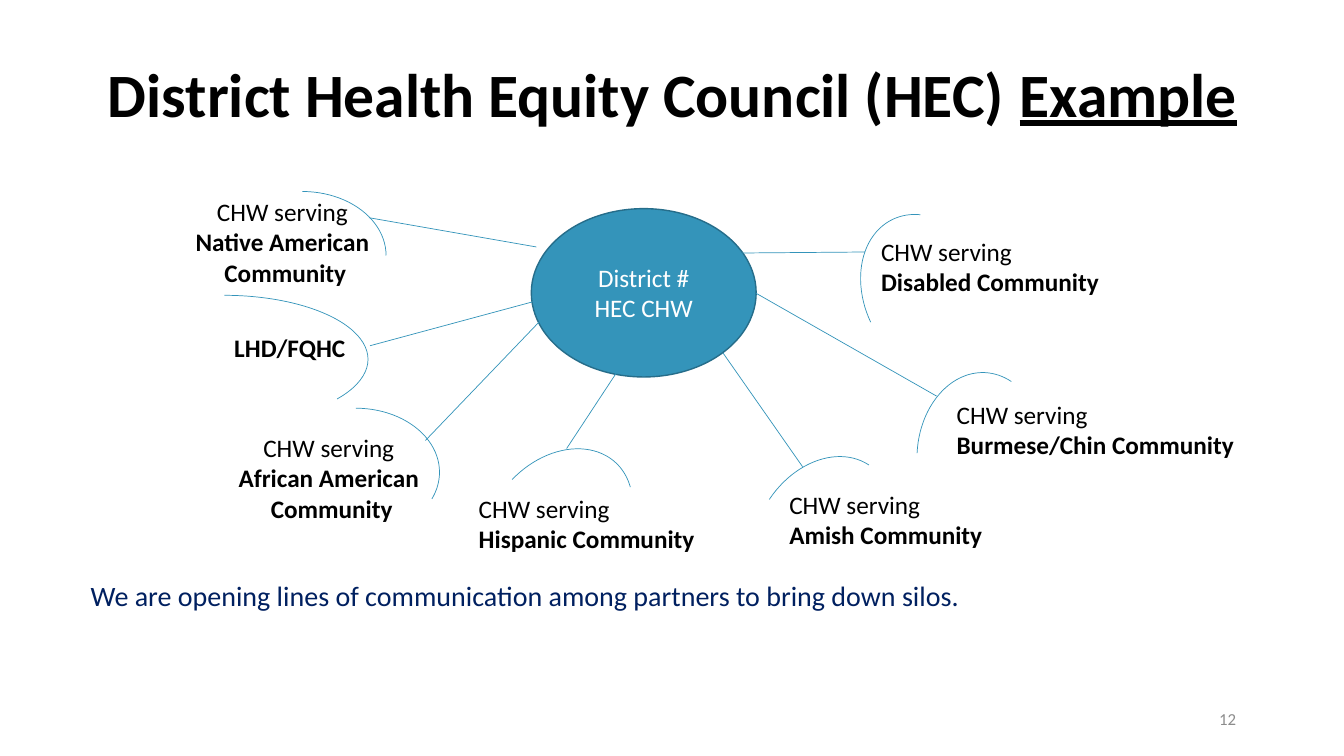
from lxml import etree
from pptx import Presentation
from pptx.dml.color import RGBColor
from pptx.enum.shapes import MSO_CONNECTOR, MSO_SHAPE
from pptx.enum.text import MSO_ANCHOR, MSO_AUTO_SIZE, PP_ALIGN
from pptx.oxml.ns import qn
from pptx.util import Inches, Pt

BLACK = RGBColor(0x00, 0x00, 0x00)
WHITE = RGBColor(0xFF, 0xFF, 0xFF)
TEAL = RGBColor(0x34, 0x94, 0xBA)
DARK_TEAL = RGBColor(0x26, 0x6D, 0x8A)
NAVY = RGBColor(0x00, 0x20, 0x60)
GRAY = RGBColor(0x8C, 0x8C, 0x8C)

LEFT, CENTER, RIGHT = PP_ALIGN.LEFT, PP_ALIGN.CENTER, PP_ALIGN.RIGHT
WIDE_SWEEP = (162, 11.616)
ARC_SIZE = (1.66, 1.27)

SPOKES = [
    ((5.38, 3.16), (4.22, 4.37)),
    ((6.12, 3.69), (5.62, 4.45)),
    ((7.17, 3.5), (7.96, 4.63)),
    ((7.5, 2.91), (9.29, 3.93)),
    ((5.32, 2.45), (3.66, 2.16)),
    ((7.36, 2.51), (8.58, 2.5)),
    ((5.3, 2.99), (3.67, 3.43)),
]

COMMUNITIES = [
    ((2.26, 4.24, 2.06, 1.01), CENTER, ["African American ", "Community"]),
    ((4.65, 4.84, 2.36, 0.71), LEFT, ["Hispanic Community"]),
    ((7.73, 4.8, 2.13, 0.71), LEFT, ["Amish Community"]),
    ((9.39, 3.91, 2.97, 0.71), LEFT, ["Burmese/Chin Community"]),
    ((1.83, 1.9, 2, 1.01), CENTER, ["Native American ", "Community"]),
    ((8.64, 2.29, 2.44, 0.71), LEFT, ["Disabled Community"]),
]

ARCS = [
    ((2.17, 1.9), 0, None),
    ((2.7, 4.05), 0, WIDE_SWEEP),
    ((4.71, 4.56), 313.6, WIDE_SWEEP),
    ((7.33, 4.67), 303.5, None),
    ((8.9, 3.89), 272.7, WIDE_SWEEP),
    ((8.38, 2.29), 244.8, WIDE_SWEEP),
]


class SlideBuilder:
    font_name = "Calibri"

    def __init__(self, page):
        self.page = page

    def add_lines(self, frame, lines, size=18, color=BLACK, align=LEFT, spacing=None):
        for index, spans in enumerate(lines):
            para = frame.paragraphs[0] if index == 0 else frame.add_paragraph()
            para.alignment = align
            if spacing:
                para.line_spacing = spacing
            for text, bold, underline in spans:
                span = para.add_run()
                span.text = text
                span.font.name = self.font_name
                span.font.size = Pt(size)
                span.font.color.rgb = color
                span.font.bold = bold
                span.font.underline = underline

    def text(self, place, lines, wrap=False, anchor=MSO_ANCHOR.TOP, **style):
        box = self.page.shapes.add_textbox(*map(Inches, place))
        frame = box.text_frame
        frame.word_wrap = wrap
        frame.auto_size = MSO_AUTO_SIZE.NONE if wrap else MSO_AUTO_SIZE.SHAPE_TO_FIT_TEXT
        frame.vertical_anchor = anchor
        self.add_lines(frame, lines, **style)

    def shape(self, kind, place, line, width, fill=None):
        shape = self.page.shapes.add_shape(kind, *map(Inches, place))
        shape.shadow.inherit = False
        if fill is None:
            shape.fill.background()
        else:
            shape.fill.solid()
            shape.fill.fore_color.rgb = fill
        shape.line.color.rgb = line
        shape.line.width = Pt(width)
        shape.text_frame.vertical_anchor = MSO_ANCHOR.MIDDLE
        return shape

    def arc(self, place, rotation=0, sweep=None):
        arc = self.shape(MSO_SHAPE.ARC, place, TEAL, 0.5)
        arc.rotation = rotation
        for index, value in enumerate(sweep or ()):
            arc.adjustments[index] = value
        return arc

    def spoke(self, start, end):
        spoke = self.page.shapes.add_connector(
            MSO_CONNECTOR.STRAIGHT, *map(Inches, start + end))
        spoke.line.color.rgb = TEAL
        spoke.line.width = Pt(0.5)
        etree.SubElement(spoke.element.spPr, qn("a:effectLst"))


def plain(text, bold=False, underline=False):
    return [(text, bold, underline)]


def main():
    deck = Presentation()
    deck.slide_width = Inches(13.33)
    deck.slide_height = Inches(7.5)
    builder = SlideBuilder(deck.slides.add_slide(deck.slide_layouts[6]))

    title = plain("District Health Equity Council (HEC) ", True) + plain("Example", True, True)
    builder.text((0.92, 0.51, 11.5, 0.91), [title], wrap=True,
                 anchor=MSO_ANCHOR.MIDDLE, size=44, align=CENTER, spacing=0.9)

    hub = builder.shape(MSO_SHAPE.OVAL, (5.27, 2.07, 2.23, 1.67), DARK_TEAL, 1, TEAL)
    builder.add_lines(hub.text_frame, [plain("District #"), plain("HEC CHW")],
                      color=WHITE, align=CENTER)

    for start, end in SPOKES:
        builder.spoke(start, end)
    for place, align, names in COMMUNITIES:
        serving = "CHW serving " if align == CENTER else "CHW serving"
        lines = [plain(serving)] + [plain(name, True) for name in names]
        builder.text(place, lines, align=align)
    for corner, rotation, sweep in ARCS:
        builder.arc(corner + ARC_SIZE, rotation, sweep)

    health_center = builder.arc((0.8, 2.93, 2.85, 1.27), sweep=WIDE_SWEEP)
    builder.add_lines(health_center.text_frame, [plain("LHD/FQHC", True)])

    builder.text((9.36, 6.93, 3, 0.4), [plain("12")], wrap=True,
                 anchor=MSO_ANCHOR.MIDDLE, size=12, color=GRAY, align=RIGHT)
    message = "We are opening lines of communication among partners to bring down silos."
    builder.text((0.8, 5.69, 8.93, 0.44), [plain(message)], size=20, color=NAVY)

    deck.save("out.pptx")


if __name__ == "__main__":
    main()
